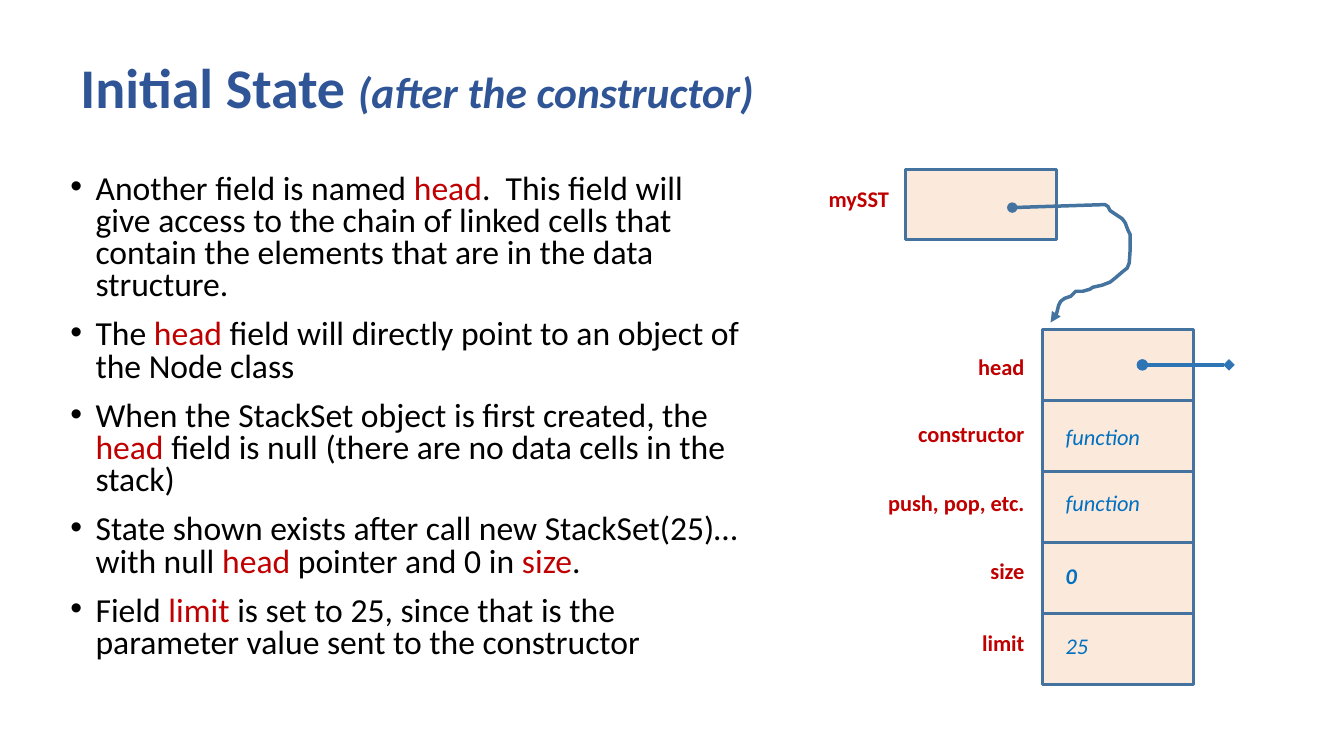
from dataclasses import dataclass

from lxml import etree
from pptx import Presentation
from pptx import util as u
from pptx.dml.color import RGBColor
from pptx.enum import shapes, text
from pptx.oxml.ns import qn


@dataclass(frozen=True)
class Theme:
    """Colours, font and type sizes of the slide."""
    font: str = "Calibri"
    title: str = "2F5597"
    ink: str = "000000"
    field: str = "C00000"
    value: str = "0070C0"
    cell: str = "F4B183"
    edge: str = "43739E"
    null_link: str = "2E75B6"
    title_size: int = 40
    subtitle_size: int = 31
    body_size: int = 24
    label_size: int = 16


T = Theme()
CELL_W, CELL_H = 1.5, 0.7
OBJECT_X, OBJECT_Y, CELL_STEP = 10.34, 3.27, 0.705
LABEL_W, LABEL_H, LABEL_RIGHT = 1.66, 0.51, 10.26
VALUE_X, VALUE_W = 10.47, 1.13

BULLETS = [
    "Another field is named |head|.  This field will give access to the chain "
    "of linked cells that contain the elements that are in the data structure.",
    "The |head| field will directly point to an object of the Node class",
    "When the StackSet object is first created, the |head |field is null "
    "(there are no data cells in the stack)",
    "State shown exists after call new StackSet(25)… with null |head |pointer "
    "and 0 in |size|.",
    "Field |limit| is set to 25, since that is the parameter value sent to the "
    "constructor",
]
FIELDS = [
    ("head", 3.45, None, None),
    ("constructor", 4.12, "function", 4.15),
    ("push, pop, etc.", 4.8, "function", 4.8),
    ("size", 5.48, "0", 5.53),
    ("limit", 6.19, "25", 6.22),
]
POINTER = [
    (10.04, 2.06), (10.96, 2.03), (10.99, 2.05), (11.01, 2.09), (11.07, 2.13),
    (11.13, 2.17), (11.16, 2.21), (11.19, 2.29), (11.21, 2.33), (11.21, 2.47),
    (11.2, 2.61), (11.18, 2.66), (11.13, 2.7), (11.06, 2.76), (11.01, 2.8),
    (10.93, 2.83), (10.84, 2.85), (10.81, 2.87), (10.74, 2.89), (10.67, 2.89),
    (10.62, 2.94), (10.56, 2.96), (10.52, 2.99), (10.5, 3.03), (10.48, 3.11),
    (10.45, 3.14), (10.42, 3.2),
]


def rgb(color):
    """Turn a hex string into a colour."""
    return RGBColor.from_string(color)


def add_run(p, content, size=T.label_size, color=T.ink, bold=False, italic=False):
    """Add a formatted run to a paragraph."""
    r = p.add_run()
    r.text = content
    r.font.name, r.font.size = T.font, u.Pt(size)
    r.font.bold, r.font.italic = bold, italic
    r.font.color.rgb = rgb(color)


def add_box(s, x, y, w, h, anchor=text.MSO_ANCHOR.TOP):
    """Add an empty wrapping text box and return its frame."""
    tf = s.shapes.add_textbox(*map(u.Inches, (x, y, w, h))).text_frame
    tf.word_wrap = True
    tf.vertical_anchor = anchor
    return tf


def add_label(s, content, x, y, w, align=text.PP_ALIGN.LEFT, **style):
    """Add a one-line label."""
    p = add_box(s, x, y, w, LABEL_H).paragraphs[0]
    p.alignment = align
    add_run(p, content, **style)


def add_title(s):
    """Add the two-part title."""
    p = add_box(s, 0.7, 0.39, 11.94, 1.02, text.MSO_ANCHOR.MIDDLE).paragraphs[0]
    p.line_spacing = 0.9
    add_run(p, "Initial State ", T.title_size, T.title, bold=True)
    add_run(p, "(after the constructor)", T.subtitle_size, T.title, True, True)


def add_bullets(s):
    """Add the bullet list, with field names between bars in red."""
    tf = add_box(s, 0.6, 1.68, 6.87, 5.4)
    for i, bullet in enumerate(BULLETS):
        p = tf.add_paragraph() if i else tf.paragraphs[0]
        pPr = p._p.get_or_add_pPr()
        pPr.set("marL", str(u.Inches(0.25)))
        pPr.set("indent", str(-u.Inches(0.25)))
        etree.SubElement(pPr, qn("a:buFont")).set("typeface", "Arial")
        etree.SubElement(pPr, qn("a:buChar")).set("char", "•")
        p.line_spacing = 0.8
        p.space_before = u.Pt(12 if i else 0)
        for k, part in enumerate(bullet.split("|")):
            add_run(p, part, T.body_size, T.field if k % 2 else T.ink)


def add_cell(s, x, y):
    """Add a memory cell with a translucent fill."""
    sp = s.shapes.add_shape(shapes.MSO_SHAPE.RECTANGLE,
                            *map(u.Inches, (x, y, CELL_W, CELL_H)))
    sp.shadow.inherit = False
    sp.fill.solid()
    sp.fill.fore_color.rgb = rgb(T.cell)
    color = sp.fill._xPr.find(qn("a:solidFill"))[0]
    etree.SubElement(color, qn("a:alpha")).set("val", "28000")
    sp.line.color.rgb = rgb(T.edge)
    sp.line.width = u.Pt(2)


def style_line(sp, color, width, tail):
    """Colour a line, start it with a dot and give it an end mark."""
    sp.line.color.rgb = rgb(color)
    sp.line.width = u.Pt(width)
    ln = sp.line._get_or_add_ln()
    etree.SubElement(ln, qn("a:headEnd")).set("type", "oval")
    etree.SubElement(ln, qn("a:tailEnd")).set("type", tail)


def add_pointer(s):
    """Draw the curved pointer from the variable to its object."""
    points = [(u.Inches(x), u.Inches(y)) for x, y in POINTER]
    builder = s.shapes.build_freeform(*points[0])
    builder.add_line_segments(points[1:], close=False)
    sp = builder.convert_to_shape()
    sp.shadow.inherit = False
    sp.fill.background()
    style_line(sp, T.edge, 2.5, "triangle")


def add_null_link(s):
    """Draw the null link of the head field."""
    sp = s.shapes.add_connector(shapes.MSO_CONNECTOR.STRAIGHT,
                                *map(u.Inches, (11.33, 3.62, 12.19, 3.62)))
    style_line(sp, T.null_link, 2.75, "diamond")
    etree.SubElement(sp._element.spPr, qn("a:effectLst"))


def add_object(s):
    """Draw the object: one labelled cell per field."""
    for i, (name, name_y, value, value_y) in enumerate(FIELDS):
        add_cell(s, OBJECT_X, OBJECT_Y + i * CELL_STEP)
        add_label(s, name, LABEL_RIGHT - LABEL_W, name_y, LABEL_W,
                  text.PP_ALIGN.RIGHT, color=T.field, bold=True)
        if value:
            add_label(s, value, VALUE_X, value_y, VALUE_W,
                      color=T.value, italic=True, bold=value == "0")


def main():
    """Build and save the slide."""
    prs = Presentation()
    prs.slide_width, prs.slide_height = u.Inches(13.33), u.Inches(7.5)
    s = prs.slides.add_slide(prs.slide_layouts[6])
    add_title(s)
    add_bullets(s)
    add_label(s, "mySST", 8.12, 1.79, 0.89, color=T.field, bold=True)
    add_cell(s, 8.98, 1.68)
    add_object(s)
    add_pointer(s)
    add_null_link(s)
    prs.save("out.pptx")


if __name__ == "__main__":
    main()
